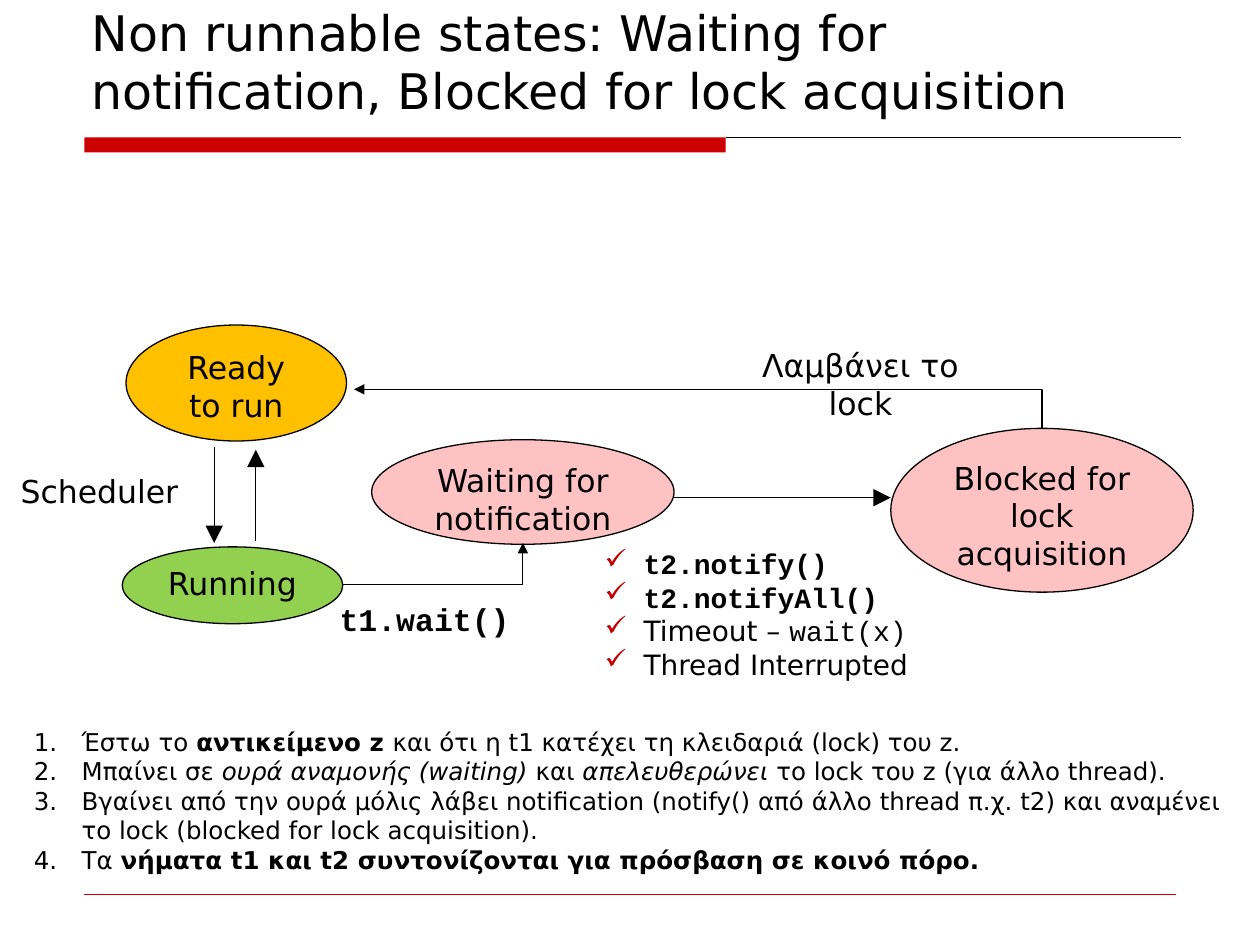
"""Build a slide on the waiting and blocked states of a thread."""
from lxml.etree import SubElement as Sub
from pptx import Presentation
from pptx.dml.color import RGBColor
from pptx.enum.shapes import MSO_CONNECTOR as Link, MSO_SHAPE as Kind
from pptx.enum.text import MSO_ANCHOR as Anchor, PP_ALIGN as Align
from pptx.oxml.ns import qn
from pptx.util import Inches, Pt

BLACK = RGBColor(0, 0, 0)
RED = RGBColor(0xCC, 0, 0)
GOLD = RGBColor(0xFF, 0xC0, 0)
GREEN = RGBColor(0x92, 0xD0, 0x50)
PINK = RGBColor(0xFF, 0xC2, 0xC2)
SANS, MONO = "DejaVu Sans", "Courier New"

TITLE = "Non runnable states: Waiting for notification, Blocked for lock acquisition"
STATES = [
    ("Ready to run", (1, 2.58, 1.75, 0.92), GOLD),
    ("Running", (0.97, 4.34, 1.75, 0.61), GREEN),
    ("Waiting for notification", (2.95, 3.49, 2.4, 0.83), PINK),
    ("Blocked for lock acquisition", (7.07, 3.4, 2.4, 1.3), PINK),
]
LABELS = [
    ("t1.wait()", (2.59, 4.71, 1.56, 0.4), dict(font=MONO, bold=True, wrap=False)),
    ("Scheduler", (0.06, 3.7, 1.46, 0.4), dict(wrap=False)),
    ("Λαμβάνει το lock", (5.95, 2.7, 1.76, 0.7), dict(side=0)),
]
ARROWS = [
    ((2.03, 4.29), (2.03, 3.57)),
    ((1.7, 3.55), (1.7, 4.31)),
    ((5.35, 3.95), (7.07, 3.95)),
]
BENDS = [
    ((2.72, 4.64), (4.15, 4.31), "tailEnd"),
    ((2.81, 3.09), (8.27, 3.4), "headEnd"),
]
EVENTS = [
    [("t2.notify()", "bm")],
    [("t2.notifyAll()", "bm")],
    [("Timeout – ", ""), ("wait(x)", "m")],
    [("Thread Interrupted", "")],
]
STEPS = [
    [("Έστω το ", ""), ("αντικείμενο z ", "b"),
     ("και ότι η t1 κατέχει τη κλειδαριά (lock) του z.", "")],
    [("Μπαίνει σε ", ""), ("ουρά αναμονής (waiting) ", "i"), ("και ", ""),
     ("απελευθερώνει ", "i"), ("το lock του z (για άλλο thread).", "")],
    [("Βγαίνει από την ουρά μόλις λάβει notification (notify() από άλλο thread π.χ. t2) "
      "και αναμένει το lock (blocked for lock acquisition).", "")],
    [("Τα ", ""), ("νήματα t1 και t2 συντονίζονται για πρόσβαση σε κοινό πόρο.", "b")],
]

deck = Presentation()
deck.slide_width, deck.slide_height = Inches(10), Inches(7.5)
shapes = deck.slides.add_slide(deck.slide_layouts[6]).shapes


def inch(nums):
    return [Inches(n) for n in nums]


def mark(para, kind, gap):
    props = para._p.get_or_add_pPr()
    props.set("marL", str(Inches(gap)))
    props.set("indent", str(-Inches(gap)))
    if kind == "check":
        tint = Sub(props, qn("a:buClr"))
        Sub(tint, qn("a:srgbClr"), val="C00000")
        Sub(props, qn("a:buChar"), char="✓")
    else:
        Sub(props, qn("a:buAutoNum"), type="arabicPeriod")


def write(text, shape=None, box=None, size=18, font=SANS, bold=False, align=Align.CENTER,
          anchor=Anchor.TOP, wrap=True, side=0.1, list_kind=None, gap=0):
    shape = shape or shapes.add_textbox(*inch(box))
    frame = shape.text_frame
    frame.word_wrap = wrap
    frame.vertical_anchor = anchor
    frame.margin_left = frame.margin_right = Inches(side)
    rows = [[(text, "")]] if isinstance(text, str) else text
    for i, row in enumerate(rows):
        para = frame.add_paragraph() if i else frame.paragraphs[0]
        para.alignment = align
        if list_kind:
            mark(para, list_kind, gap)
        for words, style in row:
            run = para.add_run()
            run.text = words
            run.font.size = Pt(size)
            run.font.name = MONO if "m" in style else font
            run.font.bold = bold or "b" in style
            run.font.italic = "i" in style
            run.font.color.rgb = BLACK


def join(start, end, kind=Link.STRAIGHT, color=BLACK, width=0.75, head=None, size="med"):
    line = shapes.add_connector(kind, *inch(start + end))
    line.line.color.rgb = color
    line.line.width = Pt(width)
    props = line._element.spPr
    if kind == Link.ELBOW:
        props.find(qn("a:prstGeom")).set("prst", "bentConnector2")
    if head:
        Sub(props.find(qn("a:ln")), qn("a:" + head), type="triangle", w=size, len=size)
    Sub(props, qn("a:effectLst"))


def block(kind, box, fill):
    shape = shapes.add_shape(kind, *inch(box))
    shape.shadow.inherit = False
    shape.fill.solid()
    shape.fill.fore_color.rgb = fill
    return shape


bar = block(Kind.RECTANGLE, (0.67, 1.09, 5.09, 0.12), RED)
bar.line.fill.background()
join((5.76, 1.09), (9.37, 1.09))
join((0.67, 7.1), (9.33, 7.1), color=RED, width=0.25)
write(TITLE, box=(0.63, 0.08, 8.75, 0.92), size=28, align=Align.LEFT, anchor=Anchor.BOTTOM)

for name, box, fill in STATES:
    oval = block(Kind.OVAL, box, fill)
    oval.line.color.rgb = BLACK
    oval.line.width = Pt(0.75)
    write(name, oval)
for start, end in ARROWS:
    join(start, end, head="tailEnd", size="lg")
for start, end, head in BENDS:
    join(start, end, kind=Link.ELBOW, head=head)
for name, box, form in LABELS:
    write(name, box=box, **form)

write(EVENTS, box=(4.7, 4.29, 2.68, 1.18), size=16, align=Align.LEFT, wrap=False,
      list_kind="check", gap=0.31)
write(STEPS, box=(0.17, 5.72, 9.83, 1.28), size=14, align=Align.LEFT,
      list_kind="number", gap=0.38)

deck.save("out.pptx")
